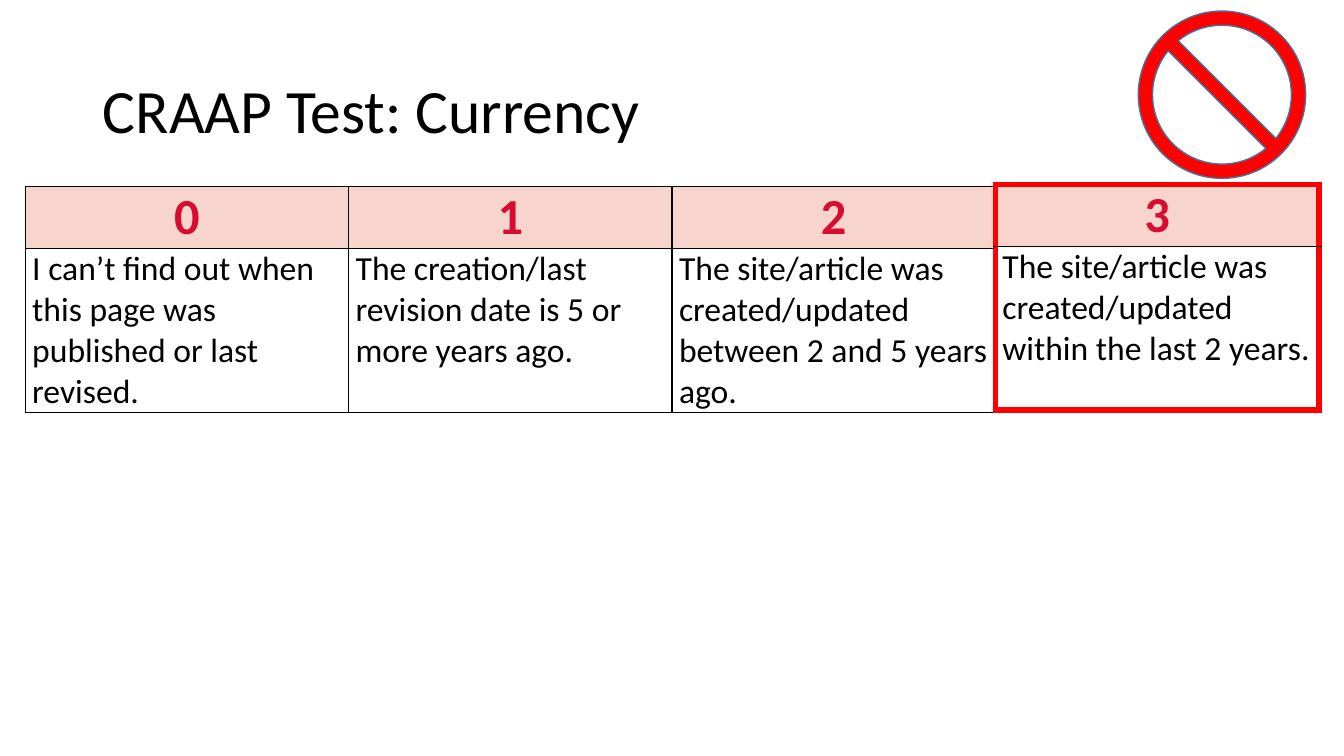
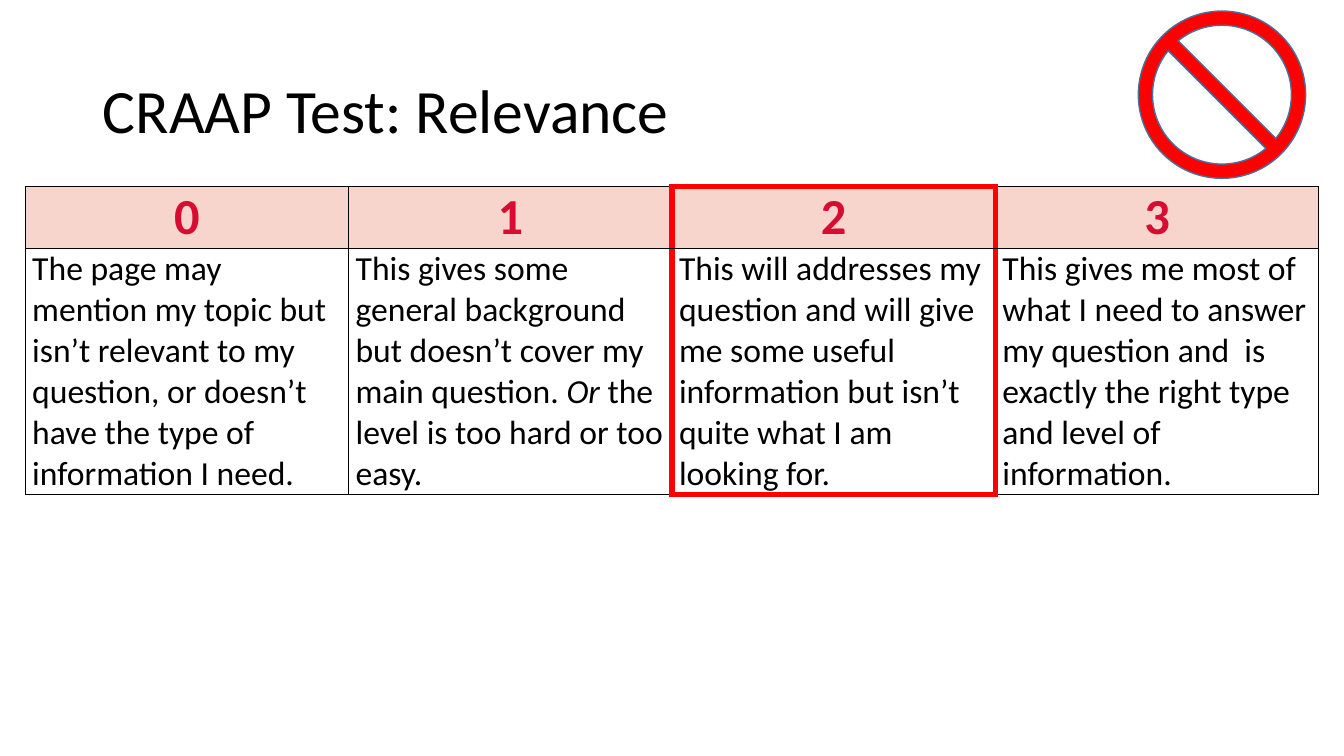
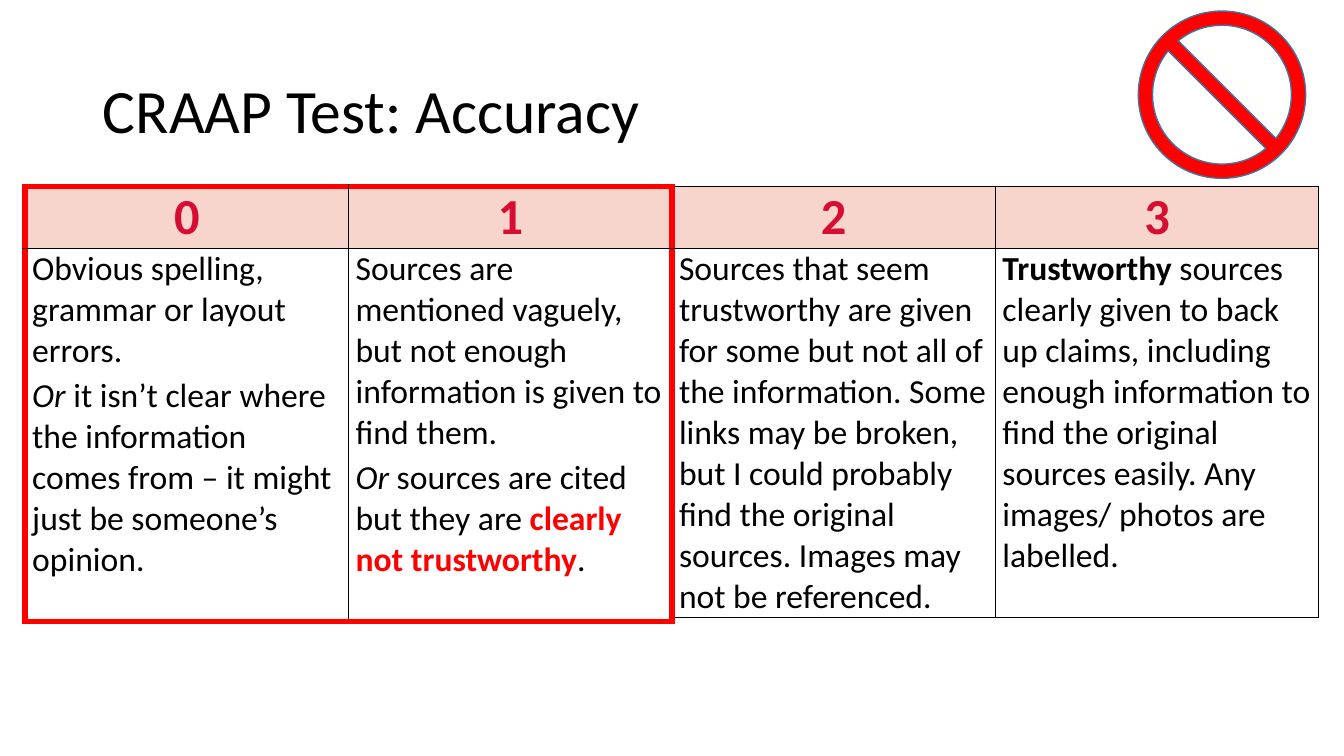
"""Build three slides that score a source with the CRAAP test."""
from dataclasses import dataclass

from lxml import etree
from pptx import Presentation
from pptx.dml.color import RGBColor
from pptx.enum.shapes import MSO_SHAPE
from pptx.enum.text import MSO_ANCHOR, PP_ALIGN
from pptx.oxml.ns import qn
from pptx.util import Inches, Pt

SIGN = MSO_SHAPE.NO_SYMBOL
LEFT, CENTER = PP_ALIGN.LEFT, PP_ALIGN.CENTER
TOP, MIDDLE = MSO_ANCHOR.TOP, MSO_ANCHOR.MIDDLE


@dataclass(frozen=True)
class Theme:
    """Colours, type sizes and line widths of the deck."""
    font: str = "Calibri"
    ink: str = "000000"
    paper: str = "FFFFFF"
    score: str = "D80C31"
    band: str = "F7D5CD"
    alert: str = "FF0000"
    rim: str = "43739E"
    title: int = 44
    head: int = 36
    body: int = 24
    thin: float = 1
    thick: float = 4.5


THEME = Theme()
WIDE, HIGH = 13.33, 7.5
EDGE, ROW = 0.25, 1.85
COL = (WIDE - 2 * EDGE) / 4
HEAD, LINE = 0.61, 0.407


@dataclass(frozen=True)
class Test:
    """One criterion: its answers by score and the scores picked out."""
    name: str
    lines: int
    picks: range
    cells: tuple
    shift: float = 0
    extra: float = 0


OR = ("Or", "italic")

TESTS = (
    Test("Currency", 4, range(3, 4), (
        [["I can’t find out when this page was published or last revised."]],
        [["The creation/last revision date is 5 or more years ago."]],
        [["The site/article was created/updated between 2 and 5 years ago."]],
        [["The site/article was created/updated within the last 2 years."]],
    ), shift=-0.02),
    Test("Relevance", 6, range(2, 3), (
        [["The page may mention my topic but isn’t relevant to my question, "
          "or doesn’t have the type of information I need."]],
        [["This gives some general background but doesn’t cover my main "
          "question. ", OR, " the level is too hard or too easy."]],
        [["This will addresses my question and will give me some useful "
          "information but isn’t quite what I am looking for."]],
        [["This gives me most of what I need to answer my question and  is "
          "exactly the right type and level of information."]],
    )),
    Test("Accuracy", 9, range(0, 2), (
        [["Obvious spelling, grammar or layout errors."],
         [OR, " it isn’t clear where the information comes from – it might "
          "just be someone’s opinion."]],
        [["Sources are mentioned vaguely, but not enough information is "
          "given to find them."],
         [OR, " sources are cited but they are ",
          ("clearly not trustworthy", "alert"), "."]],
        [["Sources that seem trustworthy are given for some but not all of "
          "the information. Some links may be broken, but I could probably "
          "find the original sources. Images may not be referenced."]],
        [[("Trustworthy", "bold"), " sources clearly given to back up "
          "claims, including enough information to find the original "
          "sources easily. Any images/ photos are labelled."]],
    ), extra=0.04),
)


def rgb(code):
    """Turn a hex code into a colour."""
    return RGBColor.from_string(code)


def style(para, size, color, bold=False):
    """Set the font of a paragraph."""
    font = para.font
    font.name, font.size, font.bold = THEME.font, Pt(size), bold
    font.color.rgb = rgb(color)


def add_run(para, part):
    """Add plain text, or a pair of text and emphasis."""
    text, mark = (part, "") if isinstance(part, str) else part
    run = para.add_run()
    run.text = text
    if mark == "italic":
        run.font.italic = True
    elif mark:
        run.font.bold = True
    if mark == "alert":
        run.font.color.rgb = rgb(THEME.alert)


def border(cell, side, strong):
    """Draw one side of a cell, thick and red when strong."""
    width, color = ((THEME.thick, THEME.alert) if strong
                    else (THEME.thin, THEME.ink))
    props = cell._tc.get_or_add_tcPr()
    line = etree.SubElement(props, qn(f"a:ln{side}"), w=str(Pt(width)))
    fill = etree.SubElement(line, qn("a:solidFill"))
    etree.SubElement(fill, qn("a:srgbClr"), val=color)


def fill_cell(cell, paras, head):
    """Write and colour a score cell or an answer cell."""
    cell.fill.solid()
    cell.fill.fore_color.rgb = rgb(THEME.band if head else THEME.paper)
    cell.margin_left = cell.margin_right = Inches(0.07)
    cell.margin_top = cell.margin_bottom = 0
    cell.vertical_anchor = MIDDLE if head else TOP
    frame = cell.text_frame
    for num, parts in enumerate(paras):
        para = frame.add_paragraph() if num else frame.paragraphs[0]
        para.alignment = CENTER if head else LEFT
        para.space_before = Pt(12 if head else 3)
        if head:
            style(para, THEME.head, THEME.score, True)
        else:
            style(para, THEME.body, THEME.ink)
        for part in parts:
            add_run(para, part)


def add_grid(slide, test, scores, top, body, strong=False):
    """Add a table of the given scores, framed in red when strong."""
    count = len(scores)
    table = slide.shapes.add_table(
        2, count, Inches(EDGE + COL * scores[0]), Inches(top),
        Inches(COL * count), Inches(HEAD + body)).table
    table.first_row = table.horz_banding = False
    for row, size in zip(table.rows, (HEAD, body)):
        row.height = Inches(size)
    for col, score in enumerate(scores):
        table.columns[col].width = Inches(COL)
        for row, paras in enumerate(([[str(score)]], test.cells[score])):
            cell = table.cell(row, col)
            outer = {"L": col == 0, "R": col == count - 1,
                     "T": row == 0, "B": row == 1}
            for side, edge in outer.items():
                border(cell, side, strong and edge)
            fill_cell(cell, paras, row == 0)


def add_title(slide, text):
    """Place and format the title."""
    title = slide.shapes.title
    title.left, title.top = Inches(0.92), Inches(0.4)
    title.width, title.height = Inches(11.5), Inches(1.45)
    frame = title.text_frame
    frame.text = text
    frame.vertical_anchor = MIDDLE
    para = frame.paragraphs[0]
    para.alignment, para.line_spacing = LEFT, 0.9
    style(para, THEME.title, THEME.ink)


def add_sign(slide):
    """Add the red stop sign in the top right corner."""
    side = Inches(1.66)
    sign = slide.shapes.add_shape(SIGN, Inches(11.29), Inches(0.11),
                                  side, side)
    sign.adjustments[0] = 0.085
    sign.shadow.inherit = False
    sign.fill.solid()
    sign.fill.fore_color.rgb = rgb(THEME.alert)
    sign.line.color.rgb = rgb(THEME.rim)
    sign.line.width = Pt(THEME.thin)


def add_test(deck, test):
    """Add the slide of one criterion."""
    slide = deck.slides.add_slide(deck.slide_layouts[5])
    body = test.lines * LINE
    add_title(slide, f"CRAAP Test: {test.name}")
    add_grid(slide, test, range(4), ROW, body)
    add_sign(slide)
    add_grid(slide, test, test.picks, ROW + test.shift,
             body + test.extra, strong=True)


def main():
    """Build and save the deck."""
    deck = Presentation()
    deck.slide_width, deck.slide_height = Inches(WIDE), Inches(HIGH)
    for test in TESTS:
        add_test(deck, test)
    deck.save("out.pptx")


if __name__ == "__main__":
    main()
